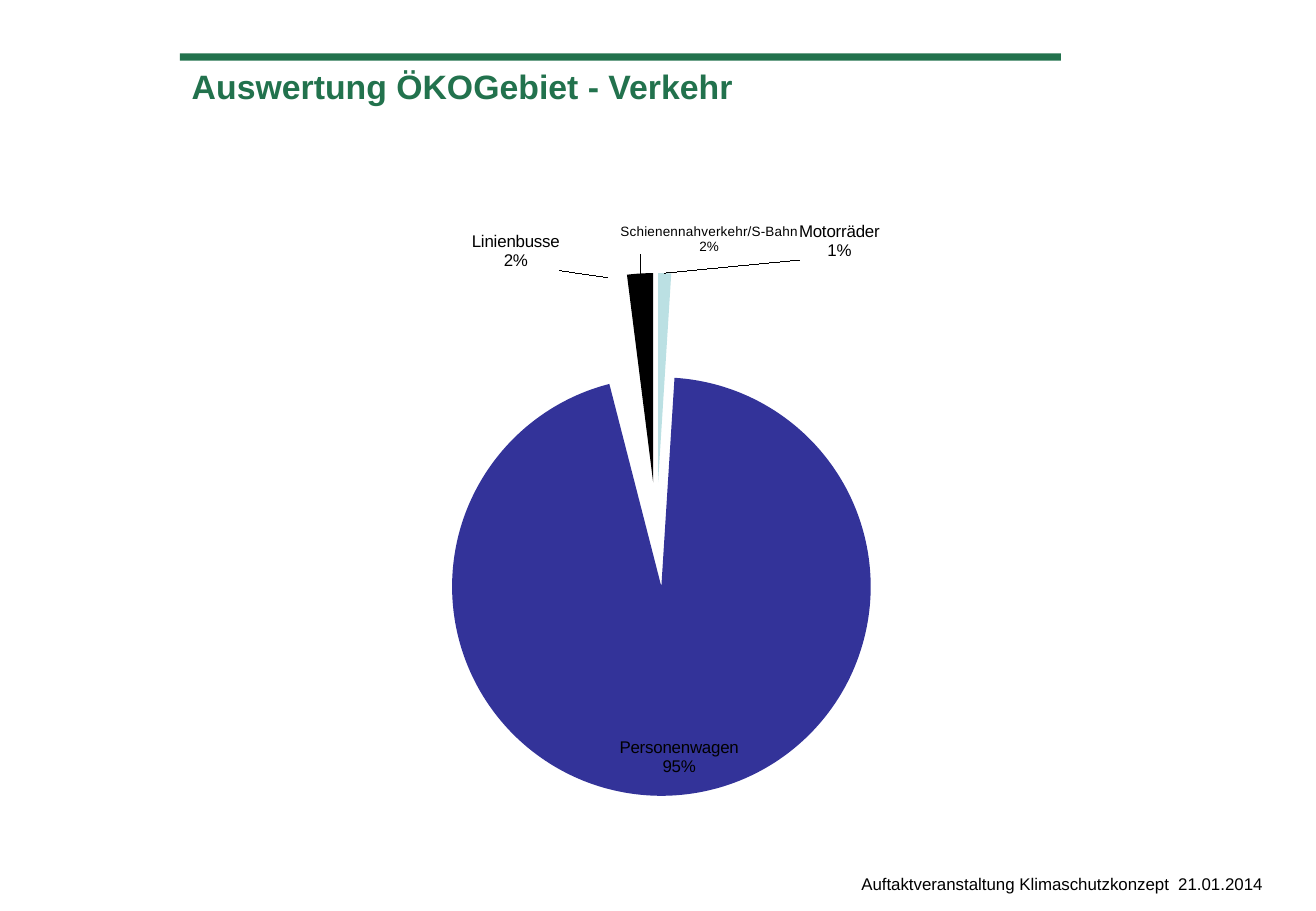
import dataclasses

import pptx
import pptx.chart.data
import pptx.dml.color
import pptx.enum.chart
import pptx.enum.shapes
import pptx.enum.text
import pptx.oxml
import pptx.oxml.ns
import pptx.util
from pptx.util import Inches


@dataclasses.dataclass(frozen=True)
class Theme:
    font: str = "Arial"
    green: str = "22724D"
    black: str = "000000"
    slice_colors: tuple = ("BBE0E3", "333399", "FFFFFF", "000000")
    title_size: int = 20
    text_size: int = 10
    small_size: int = 8


THEME = Theme()
OUTSIDE = pptx.enum.chart.XL_LABEL_POSITION.OUTSIDE_END
INSIDE = pptx.enum.chart.XL_LABEL_POSITION.INSIDE_END

# Category, percent, label place, label shift (x, y), label size
SLICES = [
    ("Motorräder", 1, OUTSIDE, (0.15, -0.01), THEME.text_size),
    ("Personenwagen", 95, INSIDE, (0.05, -0.02), THEME.text_size),
    ("Linienbusse", 2, OUTSIDE, (-0.04, 0), THEME.text_size),
    ("Schienennahverkehr/S-Bahn", 2, OUTSIDE, (0.06, -0.02),
     THEME.small_size),
]
# Square plot area as fractions of the chart: x, y, w, h
PLOT_AREA = {"x": 0.28, "y": 0.1, "w": 0.45, "h": 0.88}
EXPLOSION = 25


def rgb(value):
    return pptx.dml.color.RGBColor.from_string(value)


def style_font(font, size, color, bold=False):
    font.name = THEME.font
    font.size = pptx.util.Pt(size)
    font.bold = bold
    font.color.rgb = rgb(color)


def chart_element(tag, value=None):
    element = pptx.oxml.parse_xml(
        f'<c:{tag} {pptx.oxml.ns.nsdecls("c")}/>')
    if value is not None:
        element.set("val", str(value))
    return element


def manual_layout(values):
    layout = chart_element("layout")
    manual = chart_element("manualLayout")
    layout.append(manual)
    for tag, value in values.items():
        manual.append(chart_element(tag, value))
    return layout


def add_text(slide, box, text, size, color, bold=False):
    shape = slide.shapes.add_textbox(*map(Inches, box))
    frame = shape.text_frame
    frame.word_wrap = True
    frame.vertical_anchor = pptx.enum.text.MSO_ANCHOR.TOP
    paragraph = frame.paragraphs[0]
    paragraph.text = text
    style_font(paragraph.font, size, color, bold)


def add_header(slide, left, top, width):
    # Green rule with the title below
    rule = slide.shapes.add_shape(
        pptx.enum.shapes.MSO_SHAPE.RECTANGLE,
        *map(Inches, (left, top, width, 0.06)))
    rule.shadow.inherit = False
    rule.fill.solid()
    rule.fill.fore_color.rgb = rgb(THEME.green)
    rule.line.fill.background()
    add_text(slide, (left, top + 0.05, width - 0.09, 0.93),
             "Auswertung ÖKOGebiet - Verkehr",
             THEME.title_size, THEME.green, bold=True)


def add_slice_label(series, index, position, shift, size):
    label = series.points[index].data_label
    style_font(label.font, size, THEME.black)
    label.position = position
    # Category name above percentage, moved from its standard place
    element = series._element.xpath(f"c:dLbls/c:dLbl[c:idx/@val='{index}']")[0]
    element.xpath("c:idx")[0].addnext(
        manual_layout({"x": shift[0], "y": shift[1]}))
    for tag, shown in (("showVal", 0), ("showCatName", 1), ("showPercent", 1)):
        element.xpath(f"c:{tag}")[0].set("val", str(shown))
    separator = chart_element("separator")
    separator.text = "\n"
    element.xpath("c:showBubbleSize")[0].addnext(separator)


def add_traffic_pie(slide, box):
    data = pptx.chart.data.CategoryChartData()
    data.categories = [row[0] for row in SLICES]
    data.add_series("Series 1", [row[1] for row in SLICES])
    chart = slide.shapes.add_chart(
        pptx.enum.chart.XL_CHART_TYPE.PIE, *map(Inches, box), data).chart
    chart.has_legend = False
    chart.has_title = False
    style_font(chart.font, THEME.text_size, THEME.black)

    # Plot area
    plot = chart.plots[0]
    plot.vary_by_categories = True
    plot_area = plot._element.getparent()
    for old_layout in plot_area.xpath("c:layout"):
        plot_area.remove(old_layout)
    plot_area.insert(0, manual_layout(
        {"layoutTarget": "inner", "xMode": "edge", "yMode": "edge",
         **PLOT_AREA}))

    # Slices and labels
    series = plot.series[0]
    series._element.xpath("c:tx")[0].addnext(
        chart_element("explosion", EXPLOSION))
    labels = series.data_labels
    labels.show_value = False
    labels.show_category_name = True
    labels.show_percentage = True
    for index, (_, _, position, shift, size) in enumerate(SLICES):
        slice_format = series.points[index].format
        slice_format.fill.solid()
        slice_format.fill.fore_color.rgb = rgb(THEME.slice_colors[index])
        slice_format.line.fill.background()
        point = series._element.xpath(f"c:dPt[c:idx/@val='{index}']")[0]
        point.xpath("c:spPr")[0].addprevious(
            chart_element("explosion", EXPLOSION))
        add_slice_label(series, index, position, shift, size)
    for leader in labels._element.xpath("c:showLeaderLines"):
        leader.set("val", "1")


def add_footer(slide, box):
    add_text(slide, box, "Auftaktveranstaltung Klimaschutzkonzept  21.01.2014",
             THEME.text_size, THEME.black)


def main():
    presentation = pptx.Presentation()
    presentation.slide_width = Inches(10.83)
    presentation.slide_height = Inches(7.5)
    slide = presentation.slides.add_slide(presentation.slide_layouts[6])
    add_header(slide, 1.48, 0.44, 7.25)
    add_traffic_pie(slide, (0.57, 1.75, 9.57, 4.91))
    add_footer(slide, (6.99, 7.14, 3.84, 0.31))
    presentation.save("out.pptx")


if __name__ == "__main__":
    main()
